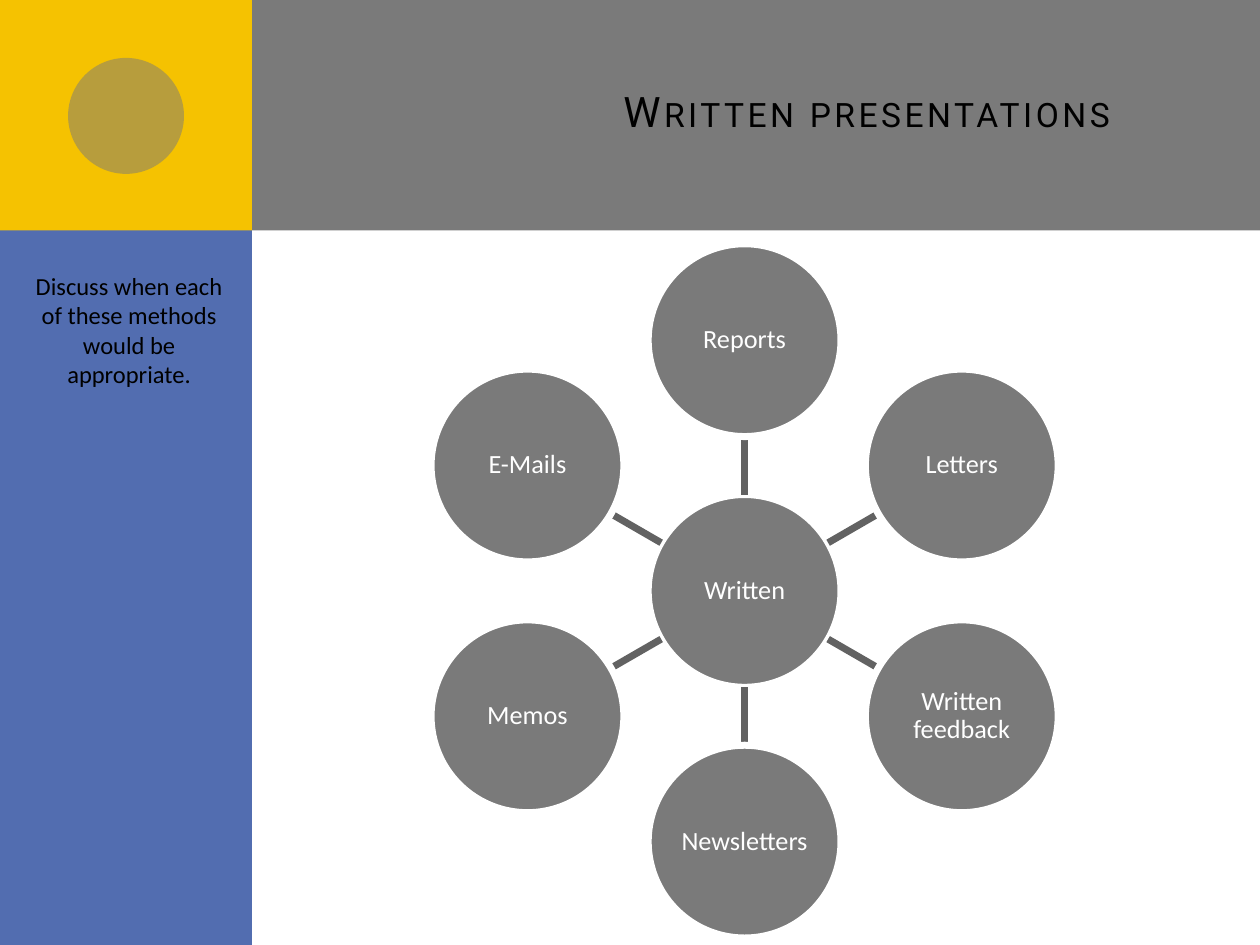
from math import cos, radians, sin

from lxml import etree
from pptx import Presentation
from pptx.dml.color import RGBColor
from pptx.enum.shapes import MSO_CONNECTOR, MSO_SHAPE
from pptx.enum.text import MSO_ANCHOR, MSO_AUTO_SIZE, PP_ALIGN
from pptx.oxml.ns import qn
from pptx.util import Inches, Pt

COLORS = {"gray": "7A7A7A", "blue": "526DB0", "yellow": "F5C201",
          "spoke": "626262", "white": "FFFFFF", "black": "000000"}
RGB = {name: RGBColor.from_string(value) for name, value in COLORS.items()}


def add_filled(kind, box, color):
    sp = s.shapes.add_shape(kind, *[Inches(v) for v in box])
    sp.shadow.inherit = False
    sp.fill.solid()
    sp.fill.fore_color.rgb = RGB[color]
    sp.line.fill.background()
    return sp


def set_text(sp, text, size, color, align, font="Calibri"):
    tf = sp.text_frame
    tf.word_wrap = True
    p = tf.paragraphs[0]
    p.alignment = align
    r = p.add_run()
    r.text = text
    for name, value in {"name": font, "size": Pt(size), "bold": False}.items():
        setattr(r.font, name, value)
    r.font.color.rgb = RGB[color]
    return p, r


prs = Presentation()
prs.slide_width, prs.slide_height = Inches(10), Inches(7.5)
s = prs.slides.add_slide(prs.slide_layouts[5])

# Background panels
add_filled(MSO_SHAPE.RECTANGLE, (0.5, 0, 9.5, 1.83), "gray")
add_filled(MSO_SHAPE.RECTANGLE, (0, 0, 2, 7.5), "blue")
add_filled(MSO_SHAPE.RECTANGLE, (0, 0, 2, 1.83), "yellow")
dot = add_filled(MSO_SHAPE.OVAL, (0.54, 0.46, 0.92, 0.92), "gray")
dot_color = dot.element.spPr.find(qn("a:solidFill")).find(qn("a:srgbClr"))
etree.SubElement(dot_color, qn("a:alpha"), val="50000")

# Title, brought in front of the panels
title = s.shapes.title
title.element.getparent().append(title.element)
title.left, title.top, title.width, title.height = [
    Inches(v) for v in (2.67, 0.25, 6.83, 1.25)]
title.text_frame.auto_size = MSO_AUTO_SIZE.NONE
title.text_frame.vertical_anchor = MSO_ANCHOR.MIDDLE
p, r = set_text(title, "Written presentations", 24, "black", PP_ALIGN.RIGHT, "Roboto")
r.font.element.set("cap", "small") if hasattr(r.font, "element") else None
r_pr = r._r.get_or_add_rPr()
r_pr.set("cap", "small")
r_pr.set("spc", "200")

# Hub and spokes: clockwise from the top
CX, CY, RING, SIZE = 5.91, 4.69, 1.99, 1.53
methods = ["Reports", "Letters", "Written feedback", "Newsletters", "Memos", "E-Mails"]
nodes = [("Written", 0, 0)]
for i, method in enumerate(methods):
    angle = radians(360 / len(methods) * i - 90)
    nodes.append((method, cos(angle), sin(angle)))

for label, dx, dy in nodes:
    if dx or dy:
        start, end = SIZE / 2, RING - SIZE / 2
        spoke = s.shapes.add_connector(
            MSO_CONNECTOR.STRAIGHT,
            Inches(CX + start * dx), Inches(CY + start * dy),
            Inches(CX + end * dx), Inches(CY + end * dy))
        spoke.line.color.rgb = RGB["spoke"]
        spoke.line.width = Pt(4)
        etree.SubElement(spoke.element.spPr, qn("a:effectLst"))
    node = add_filled(
        MSO_SHAPE.OVAL,
        (CX + RING * dx - SIZE / 2, CY + RING * dy - SIZE / 2, SIZE, SIZE), "gray")
    node.line.color.rgb = RGB["white"]
    node.line.width = Pt(4)
    tf = node.text_frame
    tf.vertical_anchor = MSO_ANCHOR.MIDDLE
    for side in ("left", "top", "right", "bottom"):
        setattr(tf, f"margin_{side}", Inches(0.01))
    p, r = set_text(node, label, 15, "white", PP_ALIGN.CENTER)
    p.line_spacing = 0.9

# Discussion prompt
prompt = s.shapes.add_textbox(Inches(0.12), Inches(2.1), Inches(1.81), Inches(1.04))
set_text(prompt, "Discuss when each of these methods would be appropriate.",
         14, "black", PP_ALIGN.CENTER)

prs.save("out.pptx")
